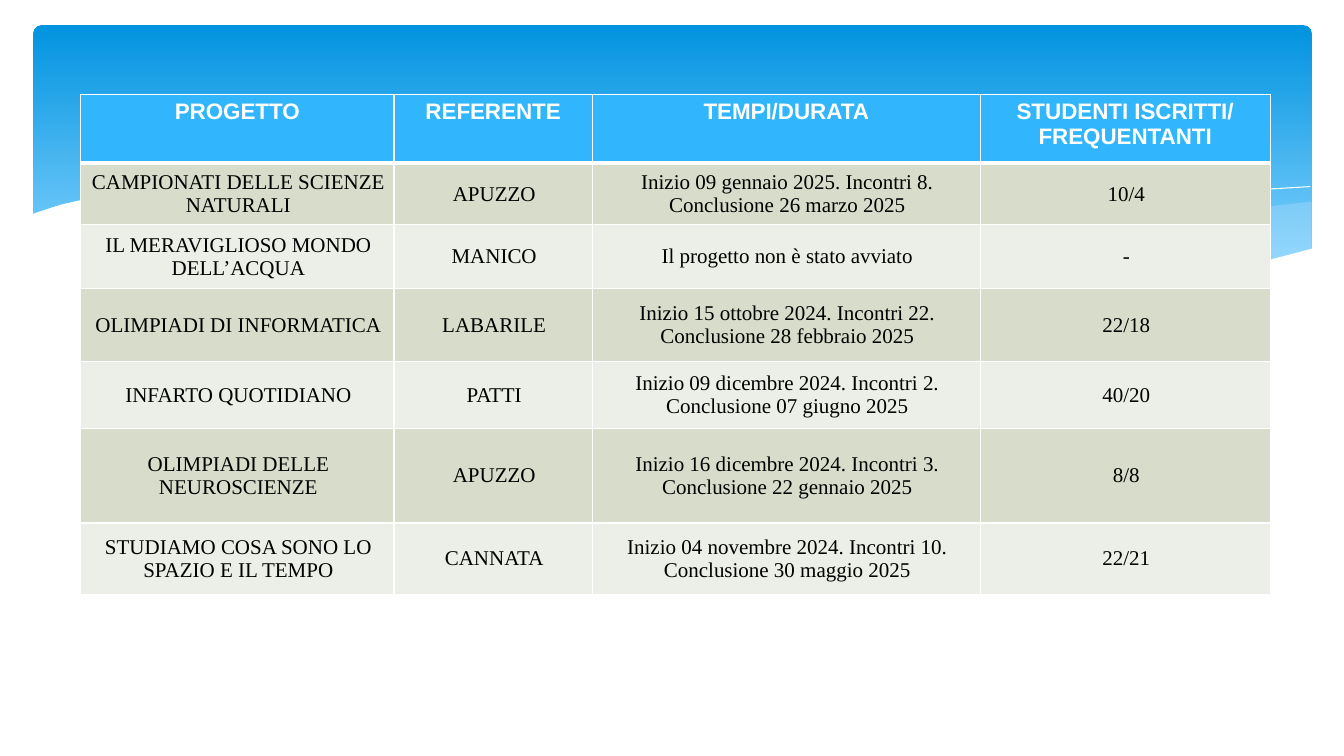
from lxml.etree import SubElement
from pptx import Presentation
from pptx.dml.color import RGBColor
from pptx.enum.shapes import MSO_SHAPE
from pptx.enum.text import MSO_ANCHOR, PP_ALIGN
from pptx.oxml.ns import qn
from pptx.util import Inches, Pt

COLORS = {
    "white": "FFFFFF", "black": "000000", "band_top": "0293E0", "band_bottom": "83D3FE",
    "wave": "C6E7FC", "header": "31B6FD", "odd": "D8DDCB", "even": "ECEFE7",
}

RIGHT_WAVE = [
    (100, 64.8), (97.2, 66.3), (92.7, 69.6), (87.9, 73.3), (79.3, 80.4), (71.6, 85.9),
    (67, 88.9), (71.5, 91.1), (77, 93), (83, 93.7), (89.1, 92.2), (93.5, 89.6),
    (97.2, 85.9), (100, 82.2),
]
MIDDLE_WAVE = [
    (91.3, 91.9), (85.4, 88.9), (78.9, 84.8), (71.6, 79.6), (63.6, 73), (57.3, 67.8),
    (51.5, 64.1), (43.9, 60.7), (37.3, 59.3), (31.9, 60), (27.5, 61.5), (33.4, 64.4),
    (39.9, 68.9), (44.6, 73), (53.1, 79.6), (60.7, 85.2), (68.9, 90), (76.1, 93),
    (82.3, 93.7), (87.5, 93.3),
]
FALLING_LINE = [
    (29.9, 63), (33.5, 61.1), (39.6, 60), (46.7, 60.7), (53.4, 62.6), (61.4, 66.3),
    (70.5, 71.9), (77.4, 77), (84.8, 83.7), (92.8, 91.5),
]
RISING_LINE = [
    (61.9, 85.9), (68.1, 80), (76, 73.3), (85.3, 66.3), (91.6, 62.6), (96, 60.4), (99.9, 59.3),
]
WHITE_WAVE = [
    (100.2, 81.9), (96.3, 86.7), (91.9, 90.4), (86.8, 92.6), (82.4, 93.3), (77.4, 92.6),
    (69.8, 90), (60.8, 84.8), (53.1, 79.3), (44.4, 72.2), (35.7, 65.6), (28.2, 61.1),
    (21.5, 59.3), (15.9, 58.9), (11.3, 59.6), (7.4, 61.5), (5.4, 63), (3.6, 64.4),
    (2.2, 65.9), (1.2, 67.4), (-0.2, 69.6), (-0.2, 112.6), (100.2, 112.6),
]

HEADINGS = ["PROGETTO", "REFERENTE", "TEMPI/DURATA", "STUDENTI ISCRITTI/\nFREQUENTANTI"]
PROJECTS = [
    ("CAMPIONATI DELLE SCIENZE NATURALI", "APUZZO",
     "Inizio 09 gennaio 2025. Incontri 8. Conclusione 26 marzo 2025", "10/4"),
    ("IL MERAVIGLIOSO MONDO DELL’ACQUA", "MANICO", "Il progetto non è stato avviato", "-"),
    ("OLIMPIADI DI INFORMATICA", "LABARILE",
     "Inizio 15 ottobre 2024. Incontri 22. Conclusione 28 febbraio 2025", "22/18"),
    ("INFARTO QUOTIDIANO", "PATTI",
     "Inizio 09 dicembre 2024. Incontri 2. Conclusione 07 giugno 2025", "40/20"),
    ("OLIMPIADI DELLE NEUROSCIENZE", "APUZZO",
     "Inizio 16 dicembre 2024. Incontri 3. Conclusione 22 gennaio 2025", "8/8"),
    ("STUDIAMO COSA SONO LO SPAZIO E IL TEMPO", "CANNATA",
     "Inizio 04 novembre 2024. Incontri 10. Conclusione 30 maggio 2025", "22/21"),
]
COLUMN_WIDTHS = [3.11, 1.97, 3.85, 2.88]
ROW_HEIGHTS = [0.68, 0.61, 0.63, 0.73, 0.66, 0.94, 0.71]


def color(name):
    return RGBColor.from_string(COLORS[name])


def add_curve(slide, box, points, fill=None, opacity=100):
    left, top, width, height = box
    places = [(Inches(left + width * x / 100), Inches(top + height * y / 100)) for x, y in points]
    builder = slide.shapes.build_freeform(*places[0])
    builder.add_line_segments(places[1:], close=fill is not None)
    curve = builder.convert_to_shape()
    curve.shadow.inherit = False
    if fill is None:
        curve.fill.background()
        curve.line.color.rgb = color("white")
        curve.line.width = Pt(0)
        return
    curve.line.fill.background()
    curve.fill.solid()
    curve.fill.fore_color.rgb = color(fill)
    if opacity < 100:
        tint = curve.fill._xPr.find(".//" + qn("a:srgbClr"))
        SubElement(tint, qn("a:alpha"), val=str(opacity * 1000))


def add_band(slide, box):
    band = slide.shapes.add_shape(MSO_SHAPE.ROUNDED_RECTANGLE, *map(Inches, box))
    band.adjustments[0] = 0.03
    band.shadow.inherit = False
    band.line.fill.background()
    band.fill.gradient()
    band.fill.gradient_angle = 270
    stops = zip(band.fill.gradient_stops, [0, 0.9], ["band_top", "band_bottom"])
    for stop, position, name in stops:
        stop.position = position
        stop.color.rgb = color(name)
    add_curve(slide, box, RIGHT_WAVE, "wave", 29)
    add_curve(slide, box, MIDDLE_WAVE, "wave", 40)
    add_curve(slide, box, FALLING_LINE)
    add_curve(slide, box, RISING_LINE)
    add_curve(slide, box, WHITE_WAVE, "white")


def add_borders(cell, widths):
    properties = cell._tc.get_or_add_tcPr()
    for side, width in zip("LRTB", widths):
        border = SubElement(properties, qn(f"a:ln{side}"), w=str(Pt(width)))
        fill = SubElement(border, qn("a:solidFill"))
        SubElement(fill, qn("a:srgbClr"), val=COLORS["white"])


def fill_cell(cell, text, row):
    heading = row == 0
    add_borders(cell, [1, 1, 3 if row == 1 else 1, 3 if heading else 1])
    cell.fill.solid()
    cell.fill.fore_color.rgb = color("header" if heading else "odd" if row % 2 else "even")
    cell.vertical_anchor = MSO_ANCHOR.TOP if heading else MSO_ANCHOR.MIDDLE
    margins = (0.1, 0.1, 0.05, 0.05) if heading else (0.04, 0.02, 0.01, 0.01)
    cell.margin_left, cell.margin_right, cell.margin_top, cell.margin_bottom = map(Inches, margins)
    for index, words in enumerate(text.split("\n")):
        frame = cell.text_frame
        paragraph = frame.add_paragraph() if index else frame.paragraphs[0]
        paragraph.alignment = PP_ALIGN.CENTER
        run = paragraph.add_run()
        run.text = words
        run.font.name = "Arial" if heading else "Times New Roman"
        run.font.size = Pt(16 if heading else 15)
        run.font.bold = heading
        run.font.color.rgb = color("white" if heading else "black")


def add_projects(slide, box):
    left, top, width, height = box
    rows = [HEADINGS, *PROJECTS]
    frame = slide.shapes.add_table(len(rows), len(HEADINGS), *map(Inches, box))
    projects = frame.table
    for column, share in zip(projects.columns, COLUMN_WIDTHS):
        column.width = Inches(width * share / sum(COLUMN_WIDTHS))
    for row, share in zip(projects.rows, ROW_HEIGHTS):
        row.height = Inches(height * share / sum(ROW_HEIGHTS))
    for row, texts in enumerate(rows):
        for column, text in enumerate(texts):
            fill_cell(projects.cell(row, column), text, row)


def main():
    deck = Presentation()
    deck.slide_width, deck.slide_height = Inches(13.33), Inches(7.5)
    slide = deck.slides.add_slide(deck.slide_layouts[6])
    add_band(slide, (0.33, 0.25, 12.68, 2.7))
    add_projects(slide, (0.8, 0.94, 11.8, 4.96))
    deck.save("out.pptx")


if __name__ == "__main__":
    main()
